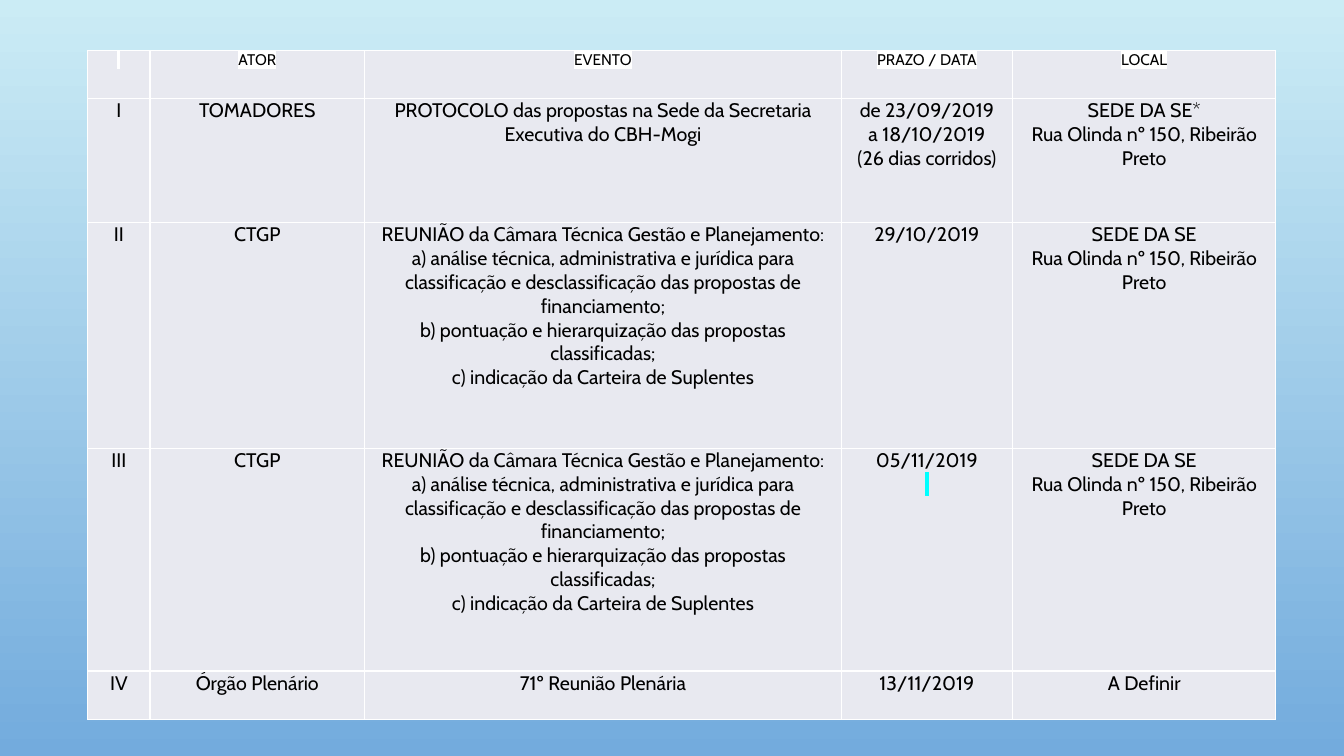
from lxml.etree import SubElement
from pptx import Presentation
from pptx.dml.color import RGBColor as RGB
from pptx.enum.text import PP_ALIGN as Align
from pptx.oxml import parse_xml
from pptx.oxml.ns import nsdecls, qn
from pptx.util import Cm, Pt

COLORS = {
    "sky": "CBECF5",
    "sea": "73ABDD",
    "cell": "E8E9F0",
    "border": "FFFFFF",
    "text": "000000",
    "header_mark": "FFFFFF",
    "date_mark": "00FFFF",
}
NBSP = chr(160)
COLUMNS = [1.57, 5.41, 12.01, 4.32, 6.63]
ROWS = [1.22, 3.12, 5.69, 5.61, 1.22]

ADDRESS = "Rua Olinda nº 150, Ribeirão Preto"
MEETING = [
    "REUNIÃO da Câmara Técnica Gestão e Planejamento:",
    "a) análise técnica, administrativa e jurídica para classificação "
    "e desclassificação das propostas de financiamento;",
    "b) pontuação e hierarquização das propostas classificadas;",
    "c) indicação da Carteira de Suplentes",
]
SCHEDULE = [
    [[NBSP], ["ATOR"], ["EVENTO"], ["PRAZO / DATA"], ["LOCAL"]],
    [
        ["I"],
        ["TOMADORES"],
        ["PROTOCOLO das propostas na Sede da Secretaria Executiva do CBH-Mogi"],
        ["de 23/09/2019", "a 18/10/2019", "(26 dias corridos)"],
        ["SEDE DA SE*", ADDRESS],
    ],
    [["II"], ["CTGP"], MEETING, ["29/10/2019"], ["SEDE DA SE", ADDRESS]],
    [["III"], ["CTGP"], MEETING, ["05/11/2019", NBSP], ["SEDE DA SE", ADDRESS]],
    [["IV"], ["Órgão Plenário"], ["71º Reunião Plenária"], ["13/11/2019"], ["A Definir"]],
]


class Deck:
    font = "Cabin"
    header_size = 11
    body_size = 14

    def __init__(self, width, height):
        self.prs = Presentation()
        self.prs.slide_width, self.prs.slide_height = Cm(width), Cm(height)
        self.s = self.prs.slides.add_slide(self.prs.slide_layouts[6])

    def background(self, *names):
        fill = self.s.background.fill
        fill.gradient()
        fill.gradient_angle = 270
        for stop, name in zip(fill.gradient_stops, names):
            stop.color.rgb = RGB.from_string(COLORS[name])

    def run(self, p, text, size, mark=None):
        r = p.add_run()
        r.text = text
        r.font.size = Pt(size)
        r.font.color.rgb = RGB.from_string(COLORS["text"])
        if mark:
            highlight = SubElement(r.font._element, qn("a:highlight"))
            SubElement(highlight, qn("a:srgbClr"), val=COLORS[mark])
        r.font.name = self.font

    def borders(self, cell):
        tcPr = cell._tc.get_or_add_tcPr()
        for i, side in enumerate(("lnL", "lnR", "lnT", "lnB")):
            tcPr.insert(i, parse_xml(
                f'<a:{side} {nsdecls("a")} w="{Pt(1)}"><a:solidFill>'
                f'<a:srgbClr val="{COLORS["border"]}"/></a:solidFill></a:{side}>'
            ))

    def cell(self, cell, lines, header):
        cell.fill.solid()
        cell.fill.fore_color.rgb = RGB.from_string(COLORS["cell"])
        cell.margin_left = cell.margin_right = Cm(0.18)
        cell.margin_top = cell.margin_bottom = 0
        self.borders(cell)
        tf = cell.text_frame
        size = self.header_size if header else self.body_size
        for i, line in enumerate(lines):
            p = tf.add_paragraph() if i else tf.paragraphs[0]
            p.alignment = Align.CENTER
            mark = "header_mark" if header else "date_mark" if line == NBSP else None
            self.run(p, line, size, mark)

    def table(self, left, top, columns, rows, content):
        frame = self.s.shapes.add_table(
            len(rows), len(columns), Cm(left), Cm(top), Cm(sum(columns)), Cm(sum(rows))
        )
        table = frame.table
        for column, width in zip(table.columns, columns):
            column.width = Cm(width)
        for row, height in zip(table.rows, rows):
            row.height = Cm(height)
        for i, line in enumerate(content):
            for j, lines in enumerate(line):
                self.cell(table.cell(i, j), lines, header=i == 0)


def main():
    deck = Deck(33.87, 19.05)
    deck.background("sky", "sea")
    deck.table(2.21, 1.27, COLUMNS, ROWS, SCHEDULE)
    deck.prs.save("out.pptx")


if __name__ == "__main__":
    main()
